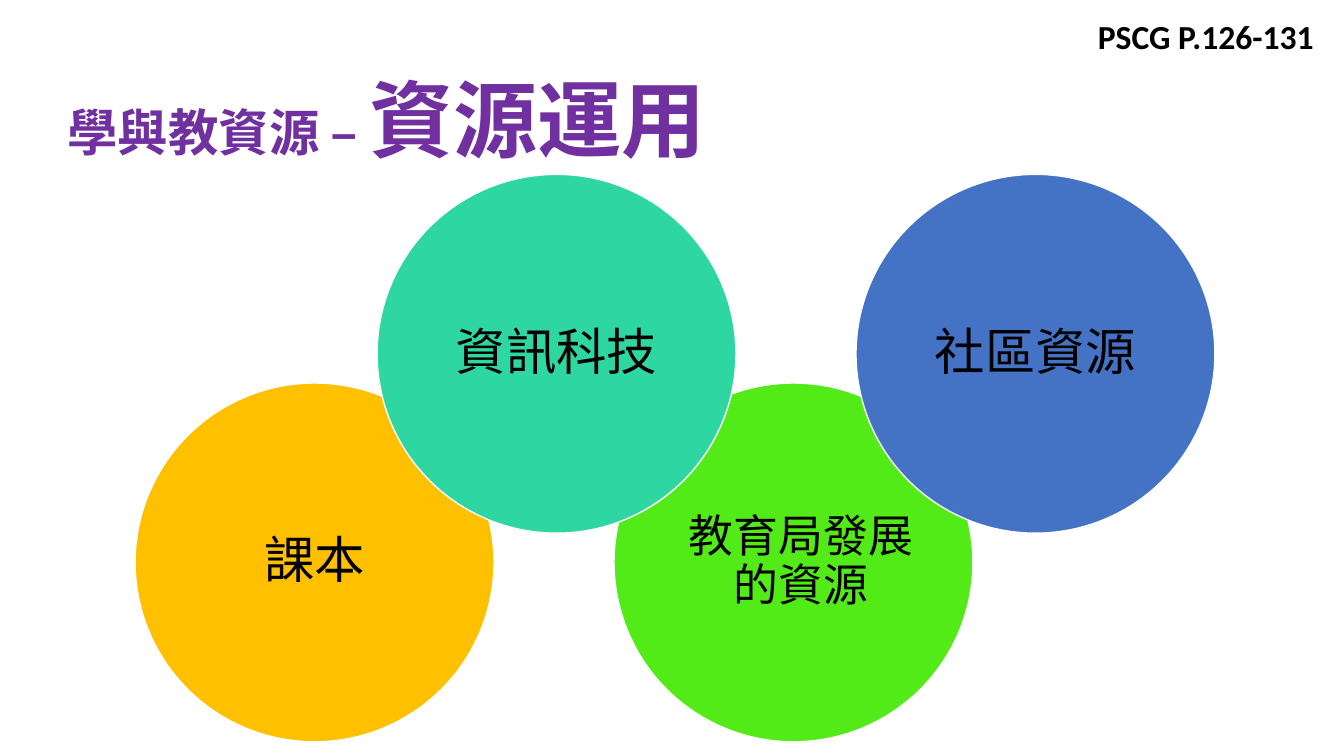
from dataclasses import dataclass

from lxml.etree import SubElement
from pptx import Presentation
from pptx.dml.color import RGBColor
from pptx.enum.shapes import MSO_SHAPE
from pptx.enum.text import MSO_ANCHOR, PP_ALIGN
from pptx.oxml.ns import qn
from pptx.util import Inches, Pt


@dataclass(frozen=True)
class Theme:
    """Colours, fonts and type sizes of the slide."""

    latin: str = "Calibri"
    chinese: str = "Noto Sans CJK SC"
    ink: str = "000000"
    title: str = "7030A0"
    outline: str = "FFFFFF"
    gold: str = "FFC000"
    green: str = "53EB17"
    blue: str = "4472C4"
    teal: str = "2ED7A1"
    title_size: int = 60
    label_size: int = 36
    small_label_size: int = 32
    reference_size: int = 24


@dataclass(frozen=True)
class Box:
    """A rectangle in inches."""

    left: float
    top: float
    width: float
    height: float

    def lengths(self):
        """Return the four lengths for a new shape."""
        return [Inches(v) for v in (self.left, self.top, self.width, self.height)]


THEME = Theme()
COLUMN_STEP = 4.75
STAGGER = 2.4
ROW_STEP = 2.07
DIAMETER = 3.56
INSET = 0.52


def add_span(para, text, size, color, font, bold=False):
    """Append one formatted run to a paragraph."""
    span = para.add_run()
    span.text = text
    span.font.size = Pt(size)
    span.font.bold = bold
    span.font.name = font
    span.font.color.rgb = RGBColor.from_string(color)
    SubElement(span.font._element, qn("a:ea")).set("typeface", font)


def add_text(shapes, box, wrap=True):
    """Add a text box and return its frame."""
    frame = shapes.add_textbox(*box.lengths()).text_frame
    frame.word_wrap = wrap
    return frame


def add_title(page, box):
    """Place the two-size heading."""
    para = add_text(page.shapes, box, wrap=False).paragraphs[0]
    for text, size in (("學與教資源 – ", THEME.label_size), ("資源運用", THEME.title_size)):
        add_span(para, text, size, THEME.title, THEME.chinese, bold=True)


def add_reference(page, box):
    """Place the page reference in the corner."""
    para = add_text(page.shapes, box).paragraphs[0]
    add_span(para, "PSCG P.126-131", THEME.reference_size, THEME.ink, THEME.latin, bold=True)


def add_resource(page, box, text, color, size, extra_width=0):
    """Group a circle with its centred label."""
    shapes = page.shapes.add_group_shape().shapes
    circle = shapes.add_shape(MSO_SHAPE.OVAL, *box.lengths())
    circle.shadow.inherit = False
    circle.fill.solid()
    circle.fill.fore_color.rgb = RGBColor.from_string(color)
    circle.line.color.rgb = RGBColor.from_string(THEME.outline)
    circle.line.width = Pt(1)
    side = box.width - 2 * INSET
    frame = add_text(shapes, Box(box.left + INSET, box.top + INSET, side + extra_width, side))
    frame.vertical_anchor = MSO_ANCHOR.MIDDLE
    frame.margin_left = frame.margin_right = Inches(0.2)
    para = frame.paragraphs[0]
    para.alignment = PP_ALIGN.CENTER
    para.line_spacing = 0.9
    add_span(para, text, size, THEME.ink, THEME.chinese)


def add_resources(page, box):
    """Stagger the four circles over two columns and two rows."""
    resources = (
        (0, 1, "課本", THEME.gold, THEME.label_size, 0),
        (1, 1, "教育局發展的資源", THEME.green, THEME.small_label_size, 0.15),
        (1, 0, "社區資源", THEME.blue, THEME.label_size, 0),
        (0, 0, "資訊科技", THEME.teal, THEME.label_size, 0),
    )
    for column, row, text, color, size, extra_width in resources:
        left = box.left + column * COLUMN_STEP + (1 - row) * STAGGER
        place = Box(left, box.top + row * ROW_STEP, DIAMETER, DIAMETER)
        add_resource(page, place, text, color, size, extra_width)


def main():
    """Build and save the slide."""
    deck = Presentation()
    deck.slide_width, deck.slide_height = Inches(13.33), Inches(7.5)
    page = deck.slides.add_slide(deck.slide_layouts[6])
    add_title(page, Box(0.57, 0.62, 6.62, 1.11))
    add_reference(page, Box(10.79, 0.11, 2.54, 0.5))
    add_resources(page, Box(1.34, 1.73, 10.71, 5.63))
    deck.save("out.pptx")


if __name__ == "__main__":
    main()
